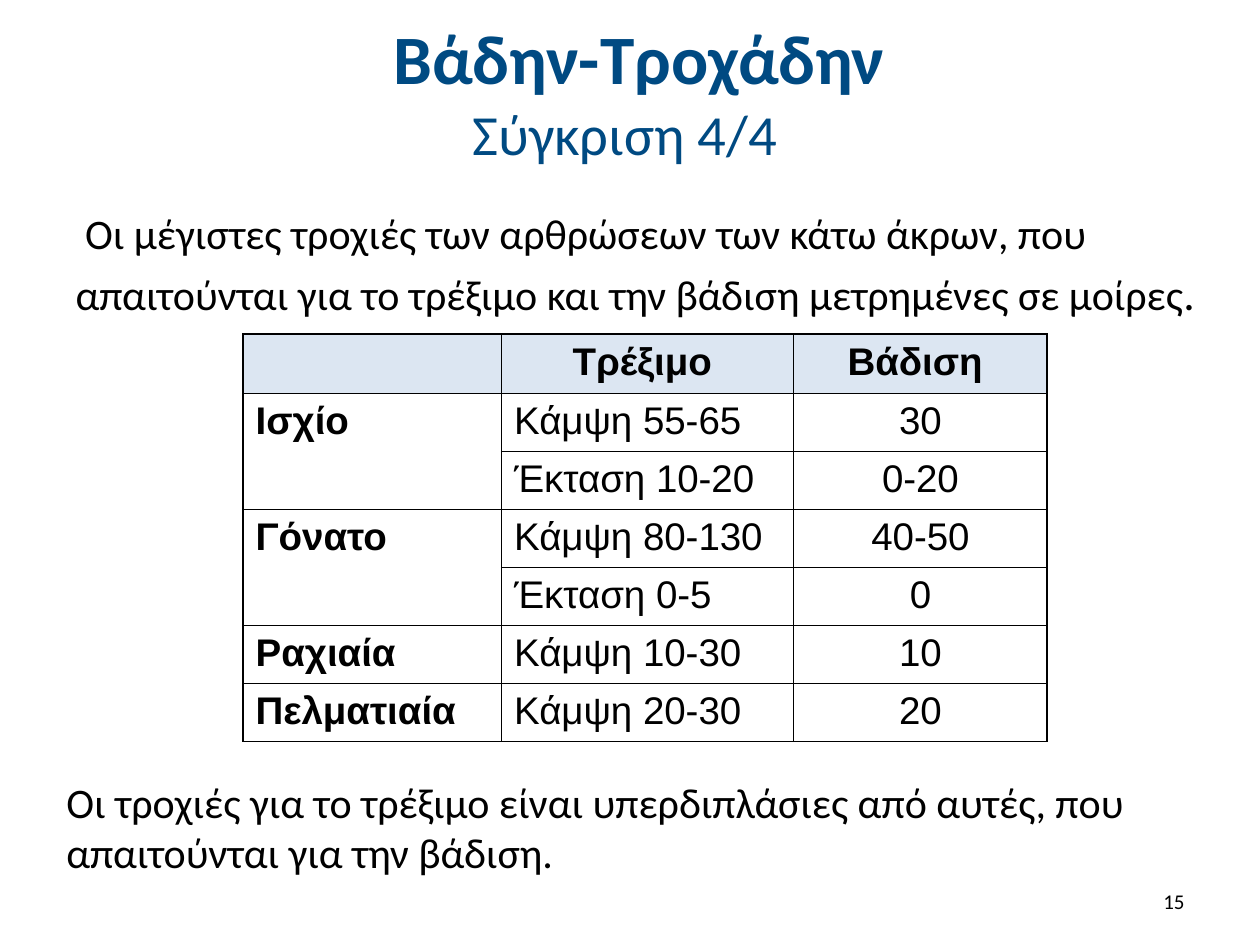
from dataclasses import dataclass

from lxml.etree import SubElement
from pptx import Presentation
from pptx.dml.color import RGBColor
from pptx.enum.text import MSO_ANCHOR, MSO_AUTO_SIZE, PP_ALIGN
from pptx.oxml.ns import qn
from pptx.util import Cm, Pt


@dataclass(frozen=True)
class Theme:
    title_color: str = "004A82"
    text_color: str = "000000"
    header_fill: str = "DCE6F2"
    text_font: str = "Calibri"
    table_font: str = "Arial"
    title_size: float = 39.6
    subtitle_size: float = 32.4
    body_size: float = 24
    stop_size: float = 26
    table_size: float = 22
    number_size: float = 12
    border_width: float = 1


THEME = Theme()

TABLE_ROWS = [
    ("", "Τρέξιμο ", "Βάδιση "),
    ("Ισχίο", "Κάμψη 55-65", "30"),
    ("", "Έκταση 10-20", "0-20"),
    ("Γόνατο", "Κάμψη 80-130", "40-50"),
    ("", "Έκταση 0-5", "0"),
    ("Ραχιαία", "Κάμψη 10-30", "10"),
    ("Πελματιαία", "Κάμψη 20-30", "20"),
]
TWO_ROW_JOINTS = (1, 3)
COLUMN_WIDTHS = (5.21, 5.89, 5.11)
ROW_HEIGHT = 1.17


def set_attributes(target, values):
    for name, value in values.items():
        setattr(target, name, value)


def place(shape, left, top, width, height):
    set_attributes(shape, {"left": Cm(left), "top": Cm(top),
                           "width": Cm(width), "height": Cm(height)})


def add_run(paragraph, text, size, color=THEME.text_color,
            font=THEME.text_font, bold=False):
    run = paragraph.add_run()
    run.text = text
    set_attributes(run.font, {"size": Pt(size), "name": font, "bold": bold})
    run.font.color.rgb = RGBColor.from_string(color)


def format_frame(frame, anchor=MSO_ANCHOR.TOP):
    set_attributes(frame, {"word_wrap": True, "vertical_anchor": anchor,
                           "auto_size": MSO_AUTO_SIZE.NONE})


def fill_title(title):
    place(title, 1.3, 0.33, 22.86, 3)
    format_frame(title.text_frame, MSO_ANCHOR.MIDDLE)
    paragraph = title.text_frame.paragraphs[0]
    paragraph.alignment = PP_ALIGN.CENTER
    add_run(paragraph, " Βάδην-Τροχάδην", THEME.title_size,
            THEME.title_color, bold=True)
    paragraph.add_line_break()
    add_run(paragraph, "Σύγκριση 4/4 ", THEME.subtitle_size, THEME.title_color)


def fill_body(body):
    place(body, 1.27, 3.94, 23.83, 4.19)
    format_frame(body.text_frame)
    paragraph = body.text_frame.paragraphs[0]
    set_attributes(paragraph, {"line_spacing": 1.12, "space_before": Pt(12)})
    # Plain paragraph: no bullet and no hanging indent
    properties = paragraph._p.get_or_add_pPr()
    properties.set("marL", "0")
    properties.set("indent", "0")
    SubElement(properties, qn("a:buNone"))
    add_run(paragraph, " Οι μέγιστες τροχιές των αρθρώσεων των κάτω άκρων, που "
            "απαιτούνται για το τρέξιμο και την βάδιση μετρημένες σε μοίρες",
            THEME.body_size)
    add_run(paragraph, ".", THEME.stop_size)


def add_text(slide, bounds, text, size, alignment=PP_ALIGN.LEFT,
             anchor=MSO_ANCHOR.TOP):
    box = slide.shapes.add_textbox(*map(Cm, bounds))
    format_frame(box.text_frame, anchor)
    paragraph = box.text_frame.paragraphs[0]
    paragraph.alignment = alignment
    add_run(paragraph, text, size)


def add_borders(cell):
    properties = cell._tc.get_or_add_tcPr()
    for position, side in enumerate(("lnL", "lnR", "lnT", "lnB")):
        line = SubElement(properties, qn(f"a:{side}"),
                          w=str(Pt(THEME.border_width)))
        fill = SubElement(line, qn("a:solidFill"))
        SubElement(fill, qn("a:srgbClr"), val=THEME.text_color)
        # Borders come before the fill in the cell properties
        properties.insert(position, line)


def format_cell(cell, text, is_header, column):
    if is_header:
        cell.fill.solid()
        cell.fill.fore_color.rgb = RGBColor.from_string(THEME.header_fill)
    else:
        cell.fill.background()
    add_borders(cell)
    paragraph = cell.text_frame.paragraphs[0]
    centred = is_header or column == 2
    paragraph.alignment = PP_ALIGN.CENTER if centred else PP_ALIGN.LEFT
    if text:
        add_run(paragraph, text, THEME.table_size, font=THEME.table_font,
                bold=is_header or column == 0)
    else:
        paragraph.font.size = Pt(THEME.table_size)


def add_joint_table(slide):
    table = slide.shapes.add_table(
        len(TABLE_ROWS), len(COLUMN_WIDTHS), Cm(4.9), Cm(6.73),
        Cm(sum(COLUMN_WIDTHS)), Cm(ROW_HEIGHT * len(TABLE_ROWS))).table
    set_attributes(table, {"first_row": False, "horz_banding": False})
    for column, width in zip(table.columns, COLUMN_WIDTHS):
        column.width = Cm(width)
    for row_index, texts in enumerate(TABLE_ROWS):
        table.rows[row_index].height = Cm(ROW_HEIGHT)
        for column_index, text in enumerate(texts):
            format_cell(table.cell(row_index, column_index), text,
                        row_index == 0, column_index)
    for row_index in TWO_ROW_JOINTS:
        table.cell(row_index, 0).merge(table.cell(row_index + 1, 0))


def main():
    presentation = Presentation()
    set_attributes(presentation, {"slide_width": Cm(25.4),
                                  "slide_height": Cm(19.05)})
    slide = presentation.slides.add_slide(presentation.slide_layouts[1])

    # Heading and introduction
    fill_title(slide.shapes.title)
    fill_body(slide.placeholders[1])

    # Slide number
    add_text(slide, (18.21, 17.65, 5.92, 1.02), "15", THEME.number_size,
             PP_ALIGN.RIGHT, MSO_ANCHOR.MIDDLE)

    # Joint ranges and conclusion
    add_joint_table(slide)
    add_text(slide, (1.09, 15.52, 23.01, 2.31),
             "Οι τροχιές για το τρέξιμο είναι υπερδιπλάσιες από αυτές, που "
             "απαιτούνται για την βάδιση.", THEME.body_size)

    presentation.save("out.pptx")


if __name__ == "__main__":
    main()
